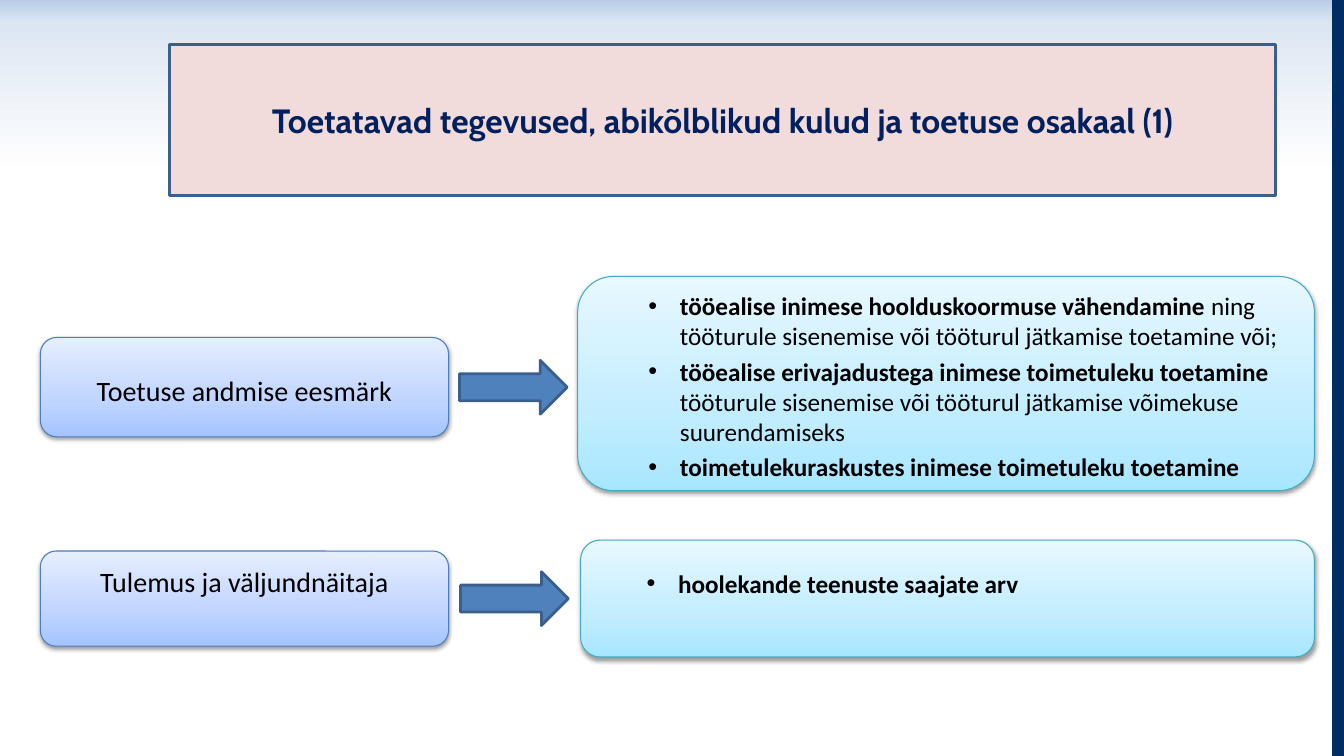
from lxml import etree
from pptx import Presentation
from pptx.dml.color import RGBColor
from pptx.enum import shapes, text
from pptx.oxml.ns import qn
from pptx.util import Pt

KIND = shapes.MSO_SHAPE
BLUE = [(0, "A4C4FF"), (35, "BFD4FF"), (100, "E6EEFF")]
CYAN = [(0, "A7E6FF"), (35, "C1EDFF"), (100, "E7F8FF")]


def color(value):
    return RGBColor.from_string(value)


def add_block(kind, place, fill, line=None, width=2, angle=90, shadow=False):
    """Add a shape; fill is one colour or a list of (percent, colour) stops."""
    block = slide.shapes.add_shape(kind, *map(Pt, place))
    block.shadow.inherit = False
    if isinstance(fill, str):
        block.fill.solid()
        block.fill.fore_color.rgb = color(fill)
    else:
        block.fill.gradient()
        block.fill.gradient_angle = angle
        stops = block._element.spPr.find(".//" + qn("a:gsLst"))
        stops.clear()
        for percent, value in fill:
            stop = etree.SubElement(stops, qn("a:gs"), pos=str(percent * 1000))
            etree.SubElement(stop, qn("a:srgbClr"), val=value)
    if line:
        block.line.color.rgb = color(line)
        block.line.width = Pt(width)
    else:
        block.line.fill.background()
    if shadow:
        effects = block._element.spPr.find(qn("a:effectLst"))
        outer = etree.SubElement(effects, qn("a:outerShdw"), blurRad=str(Pt(3.1)),
                                 dist=str(Pt(1.6)), dir="5400000", rotWithShape="0")
        black = etree.SubElement(outer, qn("a:srgbClr"), val="000000")
        etree.SubElement(black, qn("a:alpha"), val="38000")
    frame = block.text_frame
    frame.word_wrap = True
    frame.vertical_anchor = text.MSO_ANCHOR.MIDDLE
    return frame


deck = Presentation()
deck.slide_width, deck.slide_height = Pt(960), Pt(540)
slide = deck.slides.add_slide(deck.slide_layouts[6])

# Background band and edge stripe
add_block(KIND.RECTANGLE, (0, 0, 960, 122.4),
          [(0, "B9CDE5"), (13, "DCE6F2"), (100, "FFFFFF")], angle=270)
add_block(KIND.RECTANGLE, (951.5, 0, 8.5, 540), "002D64")

# Title
title = add_block(KIND.RECTANGLE, (121, 31.6, 790, 108), "F2DCDB", "3A5F8C")
title.text = "Toetatavad tegevused, abikõlblikud kulud ja toetuse osakaal (1)"
title.paragraphs[0].alignment = text.PP_ALIGN.CENTER
title_font = title.paragraphs[0].runs[0].font
title_font.name, title_font.size, title_font.bold = "Cabin", Pt(24), True
title_font.color.rgb = color("002060")

# Each topic: label, its place and insets; arrow place; detail place, insets, points (bold, plain)
topics = [
    ("Toetuse andmise eesmärk", (28.8, 241, 291.6, 71), (4, 0),
     (328.2, 257.4, 77, 38.4),
     (412.6, 197.5, 526.3, 153), (7.2, 3.6),
     [("tööealise inimese hoolduskoormuse vähendamine ",
       "ning tööturule sisenemise või tööturul jätkamise toetamine või;"),
      ("tööealise erivajadustega inimese toimetuleku toetamine ",
       "tööturule sisenemise või tööturul jätkamise võimekuse suurendamiseks"),
      ("toimetulekuraskustes inimese toimetuleku toetamine", "")]),
    ("Tulemus ja väljundnäitaja", (28.8, 393.6, 291.6, 68), (7.6, 32),
     (329, 408.4, 77, 38.4),
     (414.7, 385.8, 524.2, 83.5), (7.2, 29.2),
     [("hoolekande teenuste saajate arv", "")]),
]

for (label_text, label_place, label_insets, arrow_place,
     detail_place, detail_insets, points) in topics:
    label = add_block(KIND.ROUNDED_RECTANGLE, label_place, BLUE, "4B7EBC", 0.75, shadow=True)
    label.text = label_text
    label.margin_top, label.margin_bottom = map(Pt, label_insets)
    label.paragraphs[0].alignment = text.PP_ALIGN.CENTER
    label_font = label.paragraphs[0].runs[0].font
    label_font.name, label_font.size = "Calibri", Pt(20)
    label_font.color.rgb = color("000000")

    add_block(KIND.RIGHT_ARROW, arrow_place, "4F81BD", "3A5F8C")

    detail = add_block(KIND.ROUNDED_RECTANGLE, detail_place, CYAN, "46AAC5", 0.75, shadow=True)
    detail.margin_top, detail.margin_bottom = map(Pt, detail_insets)
    for index, point in enumerate(points):
        item = detail.add_paragraph() if index else detail.paragraphs[0]
        item.level = 1
        item.alignment = text.PP_ALIGN.LEFT
        if index:
            item.space_before = Pt(3.6)
        props = item._p.get_or_add_pPr()
        props.set("marL", str(Pt(58.5)))
        props.set("indent", str(Pt(-22.5)))
        etree.SubElement(props, qn("a:buFont"), typeface="Arial")
        etree.SubElement(props, qn("a:buChar"), char="•")
        for part, bold in zip(point, (True, False)):
            if part:
                run = item.add_run()
                run.text = part
                run.font.name, run.font.size, run.font.bold = "Calibri", Pt(18), bold
                run.font.color.rgb = color("000000")

deck.save("out.pptx")
